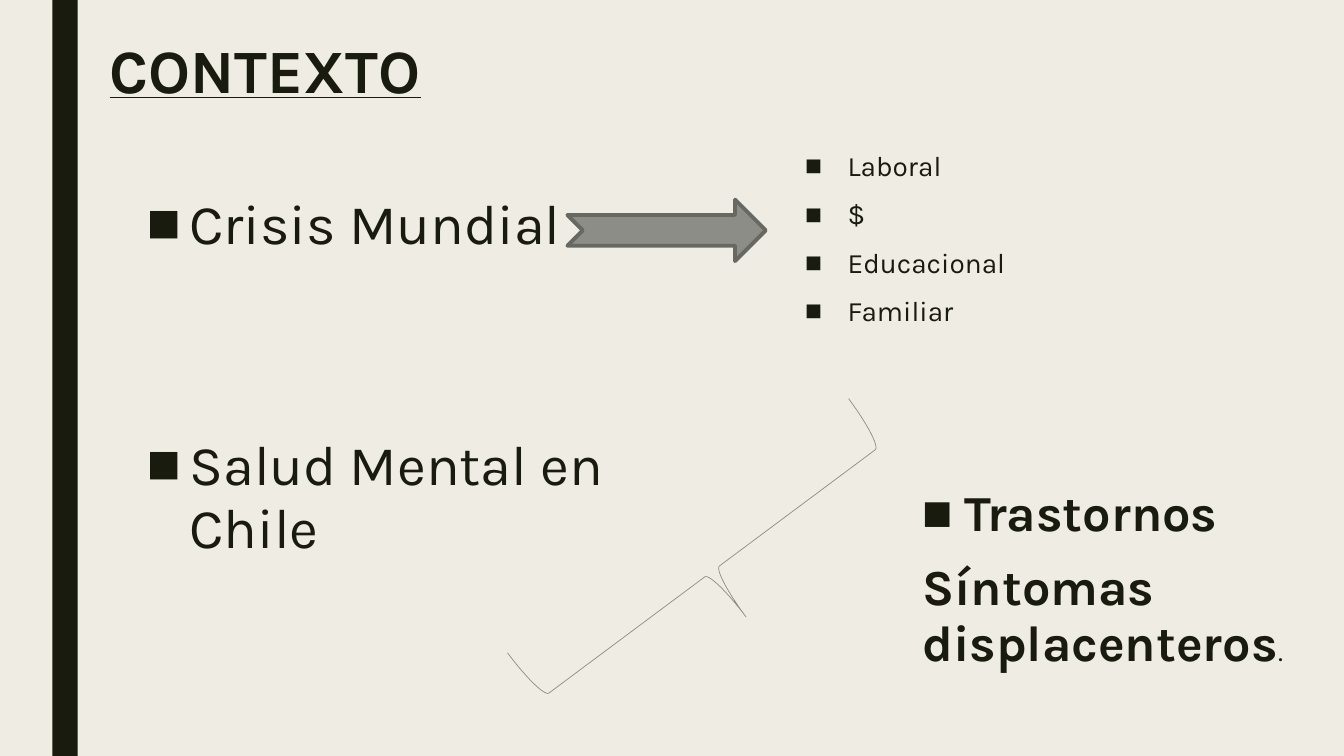
import pptx
import pptx.util
import pptx.dml.color
import pptx.enum.shapes
import pptx.enum.text
from lxml import etree

Cm, Pt = pptx.util.Cm, pptx.util.Pt
RGB = pptx.dml.color.RGBColor
KIND = pptx.enum.shapes.MSO_SHAPE
TEXT = pptx.enum.text

INK = RGB(0x19, 0x1B, 0x0E)
PAPER = RGB(0xEF, 0xED, 0xE3)
GRAY = RGB(0x8C, 0x8D, 0x86)
EDGE = RGB(0x68, 0x68, 0x63)
FACE = "Karla"
DENT = Cm(1.07)

TITLE = [{"runs": [("CONTEXTO", {"size": Pt(44), "bold": True, "underline": True})],
          "bullet": None, "line": 0.89, "before": 0, "after": 0}]
TOPICS = [{"runs": [("Crisis Mundial", {"size": Pt(40)})]},
          {"runs": [("Salud Mental en Chile", {"size": Pt(40)})], "before": 125}]
AREAS = [{"runs": [(word, {"size": Pt(20)})]}
         for word in ("Laboral", "$", "Educacional", "Familiar")]
SIGNS = [{"runs": [("Trastornos", {"size": Pt(36), "bold": True})]},
         {"runs": [("Síntomas displacenteros", {"size": Pt(36), "bold": True}),
                   (".", {"size": Pt(20)})], "bullet": False}]

BOX = (12.37, 9.96)
SHAPES = [
    {"kind": KIND.RECTANGLE, "at": (1.32, 0, 0.64, 19.05), "fill": INK},
    {"kind": KIND.NOTCHED_RIGHT_ARROW, "at": (14.3, 5.03, 5, 1.55),
     "fill": GRAY, "line": (EDGE, 2.75)},
    {"kind": KIND.RIGHT_BRACE, "at": (16.51, 9.04, 2.87, 10.72),
     "line": (GRAY, 0.5), "turn": 53.3, "adjust": (0.08, 0.5)},
]


def apply(item, form):
    for name, value in form.items():
        setattr(item, name, value)


def place(item, at):
    apply(item, dict(zip(("left", "top", "width", "height"), map(Cm, at))))


def mark(para, bullet):
    props = para._p.get_or_add_pPr()
    dent = DENT if bullet else 0
    props.set("marL", str(dent))
    props.set("indent", str(-dent))
    space = props.nsmap["a"]
    if bullet:
        etree.SubElement(props, f"{{{space}}}buSzPct", val="64000")
        etree.SubElement(props, f"{{{space}}}buFont", typeface=FACE)
        etree.SubElement(props, f"{{{space}}}buChar", char="■")
    else:
        etree.SubElement(props, f"{{{space}}}buNone")


def write(box, rows):
    frame = box.text_frame
    apply(frame, {"word_wrap": True, "auto_size": TEXT.MSO_AUTO_SIZE.NONE,
                  "vertical_anchor": TEXT.MSO_ANCHOR.TOP})
    for i, row in enumerate(rows):
        para = frame.add_paragraph() if i else frame.paragraphs[0]
        apply(para, {"alignment": TEXT.PP_ALIGN.LEFT,
                     "line_spacing": row.get("line", 0.94),
                     "space_before": Pt(row.get("before", 10)),
                     "space_after": Pt(row.get("after", 2))})
        mark(para, row.get("bullet", True))
        for text, form in row["runs"]:
            run = para.add_run()
            run.text = text
            apply(run.font, {"name": FACE, "bold": False, **form})
            run.font.color.rgb = INK


def draw(slide, part):
    shape = slide.shapes.add_shape(part["kind"], *map(Cm, part["at"]))
    shape.shadow.inherit = False
    shape.rotation = part.get("turn", 0)
    for i, value in enumerate(part.get("adjust", ())):
        shape.adjustments[i] = value
    if "fill" in part:
        shape.fill.solid()
        shape.fill.fore_color.rgb = part["fill"]
    else:
        shape.fill.background()
    if "line" in part:
        color, width = part["line"]
        shape.line.color.rgb = color
        shape.line.width = Pt(width)
    else:
        shape.line.fill.background()


def main():
    deck = pptx.Presentation()
    apply(deck, {"slide_width": Cm(33.87), "slide_height": Cm(19.05)})
    slide = deck.slides.add_slide(deck.slide_layouts[1])
    slide.background.fill.solid()
    slide.background.fill.fore_color.rgb = PAPER

    for part in SHAPES:
        draw(slide, part)

    title, body = slide.placeholders
    areas, signs = (slide.shapes.add_textbox(0, 0, 0, 0) for _ in range(2))
    for box, at, rows in (
        (title, (2.51, 0.91, 26.67, 4.11), TITLE),
        (body, (3.45, 4.75, *BOX), TOPICS),
        (areas, (20.04, 3.68, *BOX), AREAS),
        (signs, (22.99, 12.12, *BOX), SIGNS),
    ):
        place(box, at)
        write(box, rows)

    deck.save("out.pptx")


if __name__ == "__main__":
    main()
